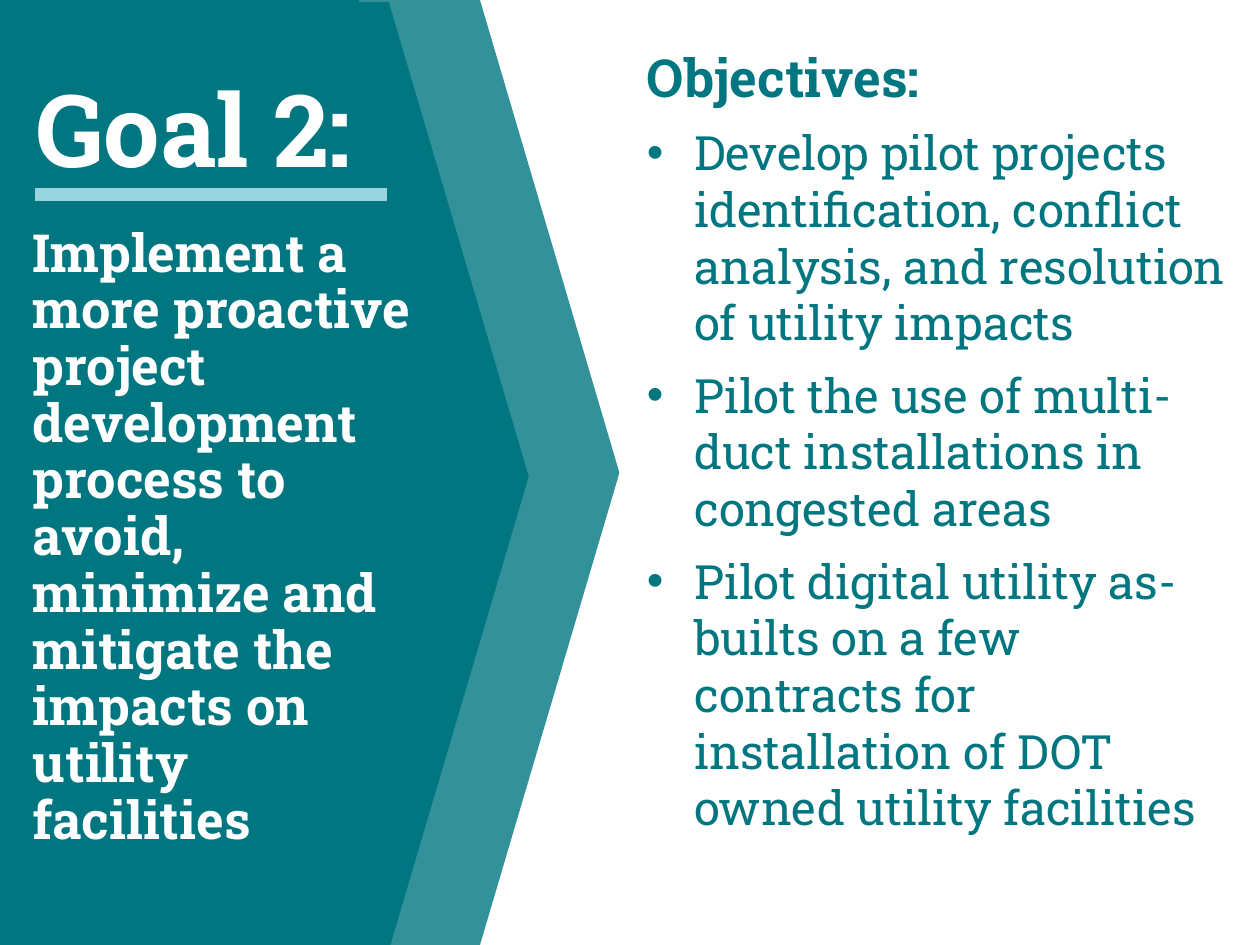
from dataclasses import dataclass

from lxml import etree
from pptx import Presentation
from pptx.dml.color import RGBColor
from pptx.enum.shapes import MSO_CONNECTOR, MSO_SHAPE
from pptx.enum.text import MSO_ANCHOR
from pptx.oxml.ns import qn
from pptx.util import Inches, Pt

RECTANGLE = MSO_SHAPE.RECTANGLE
STRAIGHT = MSO_CONNECTOR.STRAIGHT
TOP, MIDDLE = MSO_ANCHOR.TOP, MSO_ANCHOR.MIDDLE

# Grid: 20 columns by 15 rows
COLUMNS, ROWS = 20, 15
WIDTH, HEIGHT = Inches(20), Inches(15)
HANGING = 0.75


@dataclass(frozen=True)
class Theme:
    font: str = "Roboto Slab"
    teal: str = "007681"
    aqua: str = "97D4DE"
    white: str = "FFFFFF"
    title: int = 115
    heading: int = 60
    body: int = 54
    gap: int = 18
    rule: int = 15


THEME = Theme()
GOAL = ("Implement a more proactive project development process to avoid, "
        "minimize and mitigate the impacts on utility facilities")
OBJECTIVES = (
    "Develop pilot projects identification, conflict analysis, and resolution of utility impacts",
    "Pilot the use of multi-duct installations in congested areas",
    "Pilot digital utility as-builts on a few contracts for installation of DOT owned utility facilities",
)


def across(columns):
    return round(WIDTH * columns / COLUMNS)


def down(rows):
    return round(HEIGHT * rows / ROWS)


def fill_shape(shape, color, opacity=100):
    shape.shadow.inherit = False
    shape.line.fill.background()
    shape.fill.solid()
    shape.fill.fore_color.rgb = RGBColor.from_string(color)
    if opacity < 100:
        color_element = shape.fill._xPr.find(qn("a:solidFill"))[0]
        etree.SubElement(color_element, qn("a:alpha"), val=str(opacity * 1000))


def add_chevron(slide, left, top, color, opacity=100):
    """Pentagon pointing right, with a slightly blunted tip."""
    outline = [(0, 0), (2.3, 0), (4.5, 7.46), (4.52, 7.53),
               (4.5, 7.61), (2.3, 15.06), (0, 15.06)]
    points = [(across(left + x), down(top + y)) for x, y in outline]
    builder = slide.shapes.build_freeform(*points[0])
    builder.add_line_segments(points[1:], close=True)
    fill_shape(builder.convert_to_shape(), color, opacity)


def add_rule(slide, start, end, row):
    connector = slide.shapes.add_connector(
        STRAIGHT, across(start), down(row), across(end), down(row))
    connector.line.color.rgb = RGBColor.from_string(THEME.aqua)
    connector.line.width = Pt(THEME.rule)
    etree.SubElement(connector._element.spPr, qn("a:effectLst"))


def add_text_box(slide, left, top, width, height, anchor=TOP):
    box = slide.shapes.add_textbox(across(left), down(top), across(width), down(height))
    frame = box.text_frame
    frame.word_wrap = True
    frame.vertical_anchor = anchor
    return frame


def write(paragraph, text, *, size, color, bold=False, spacing=1.0, after=0, bullet=False):
    paragraph.line_spacing = spacing
    paragraph.space_after = Pt(after)
    if bullet:
        properties = paragraph._p.get_or_add_pPr()
        properties.set("marL", str(Inches(HANGING)))
        properties.set("indent", str(-Inches(HANGING)))
        etree.SubElement(properties, qn("a:buFont"), typeface="Arial")
        etree.SubElement(properties, qn("a:buChar"), char="•")
    run = paragraph.add_run()
    run.text = text
    run.font.name = THEME.font
    run.font.size = Pt(size)
    run.font.bold = bold
    run.font.color.rgb = RGBColor.from_string(color)


def main():
    presentation = Presentation()
    presentation.slide_width, presentation.slide_height = WIDTH, HEIGHT
    slide = presentation.slides.add_slide(presentation.slide_layouts[6])

    # Goal panel with its two arrow layers
    panel = slide.shapes.add_shape(RECTANGLE, 0, 0, across(5.7), HEIGHT)
    fill_shape(panel, THEME.teal)
    add_chevron(slide, 5.31, -0.03, THEME.teal, opacity=80)
    add_chevron(slide, 3.87, 0.03, THEME.teal)

    # Goal title, rule and statement
    title = add_text_box(slide, 0.48, 1.28, 6.78, 1.71, anchor=MIDDLE)
    write(title.paragraphs[0], "Goal 2:", size=THEME.title, color=THEME.white,
          bold=True, spacing=0.9)
    add_rule(slide, 0.55, 6.15, 3.09)
    statement = add_text_box(slide, 0.42, 3.55, 6.29, 9.42)
    write(statement.paragraphs[0], GOAL, size=THEME.heading, color=THEME.white,
          bold=True, spacing=0.9)

    # Objectives
    objectives = add_text_box(slide, 10.17, 0.66, 9.41, 13.6)
    write(objectives.paragraphs[0], "Objectives:", size=THEME.heading,
          color=THEME.teal, bold=True, after=THEME.gap)
    for objective in OBJECTIVES:
        write(objectives.add_paragraph(), objective, size=THEME.body,
              color=THEME.teal, after=THEME.gap, bullet=True)

    presentation.save("out.pptx")


if __name__ == "__main__":
    main()
